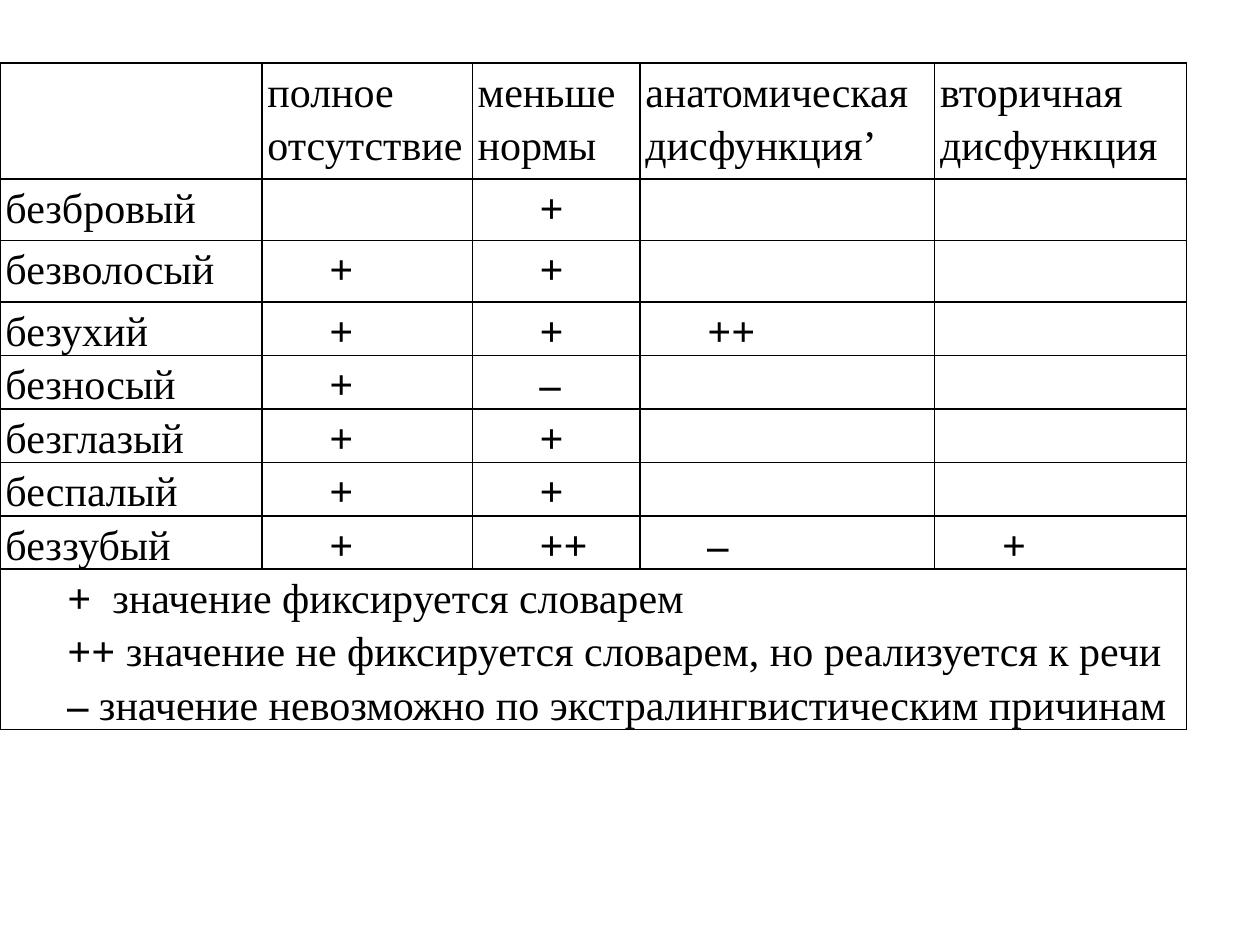
from lxml.etree import SubElement
from pptx import Presentation
from pptx.dml.color import RGBColor
from pptx.enum.text import PP_ALIGN
from pptx.oxml.ns import qn
from pptx.util import Cm, Pt

COLORS = {"ink": "000000"}
FONT = {"name": "Times New Roman", "size": Pt(24)}
CELL = {"margin_left": Cm(0.11), "margin_right": Cm(0.11), "margin_top": 0, "margin_bottom": 0}
PLAIN_TABLE = {"first_row": False, "horz_banding": False}
INDENT = Cm(1.25)
COLUMN_WIDTHS = [5.28, 4.24, 3.38, 5.94, 5.08]
ROW_HEIGHTS = [2.34, 1.24, 1.24] + [0.64] * 5 + [3.15]
HEADINGS = ["", "полное\nотсутствие", "меньше\nнормы", "анатомическая\nдисфункция’",
            "вторичная\nдисфункция"]
ADJECTIVES = [
    ["безбровый", "", "+", "", ""],
    ["безволосый", "+", "+", "", ""],
    ["безухий", "+", "+", "++", ""],
    ["безносый", "+", "–", "", ""],
    ["безглазый", "+", "+", "", ""],
    ["беспалый", "+", "+", "", ""],
    ["беззубый", "+", "++", "–", "+"],
]
LEGEND = [
    ("+", "  значение фиксируется словарем"),
    ("++", " значение не фиксируется словарем, но реализуется к речи"),
    ("–", " значение невозможно по экстралингвистическим причинам"),
]


def apply(target, values):
    """Set every attribute in a dict of format values."""
    for key, value in values.items():
        setattr(target, key, value)


def add_borders(cell):
    """Draw a thin line on all four sides of a cell."""
    properties = cell._tc.get_or_add_tcPr()
    for position, side in enumerate(("lnL", "lnR", "lnT", "lnB")):
        line = SubElement(properties, qn(f"a:{side}"), w=str(Pt(1)))
        fill = SubElement(line, qn("a:solidFill"))
        SubElement(fill, qn("a:srgbClr"), val=COLORS["ink"])
        properties.insert(position, line)


def write_line(paragraph, parts, align, indent=0):
    """Write one line from (text, bold) parts."""
    apply(paragraph, {"alignment": align, "line_spacing": 1.15})
    if indent:
        properties = paragraph._p.get_or_add_pPr()
        properties.set("marL", "0")
        properties.set("indent", str(indent))
    for text, bold in parts:
        run = paragraph.add_run()
        run.text = text
        apply(run.font, {**FONT, "bold": bold})
        run.font.color.rgb = RGBColor.from_string(COLORS["ink"])


def write_cell(cell, lines, align=PP_ALIGN.JUSTIFY, indent=0):
    """Write the lines of a cell, one paragraph each."""
    frame = cell.text_frame
    for number, parts in enumerate(lines):
        paragraph = frame.add_paragraph() if number else frame.paragraphs[0]
        write_line(paragraph, parts, align, indent)


def add_meaning_table(slide, left, top, width, height):
    """Place the table of adjectives and meanings with its legend row."""
    graphic = slide.shapes.add_table(len(ROW_HEIGHTS), len(COLUMN_WIDTHS), left, top, width, height)
    table = graphic.table
    apply(table, PLAIN_TABLE)
    for column, column_width in zip(table.columns, COLUMN_WIDTHS):
        column.width = Cm(column_width)
    for row, row_height in zip(table.rows, ROW_HEIGHTS):
        row.height = Cm(row_height)
    graphic.height = height
    for cell in table.iter_cells():
        apply(cell, CELL)
        cell.fill.background()
        add_borders(cell)

    for column, heading in enumerate(HEADINGS):
        if heading:
            write_cell(table.cell(0, column), [[(line, False)] for line in heading.split("\n")])
    for row, (adjective, *marks) in enumerate(ADJECTIVES, 1):
        write_cell(table.cell(row, 0), [[(adjective, False)]])
        for column, mark in enumerate(marks, 1):
            if mark:
                write_cell(table.cell(row, column), [[(mark, True)]], PP_ALIGN.LEFT, INDENT)

    last = len(ROW_HEIGHTS) - 1
    legend = table.cell(last, 0)
    legend.merge(table.cell(last, len(COLUMN_WIDTHS) - 1))
    write_cell(legend, [[(mark, True), (meaning, False)] for mark, meaning in LEGEND], indent=INDENT)


def main():
    """Build the slide and save it."""
    presentation = Presentation()
    apply(presentation, {"slide_width": Cm(25.4), "slide_height": Cm(19.05)})
    slide = presentation.slides.add_slide(presentation.slide_layouts[6])
    add_meaning_table(slide, Cm(0), Cm(1.27), Cm(sum(COLUMN_WIDTHS)), Cm(14.2))
    presentation.save("out.pptx")


if __name__ == "__main__":
    main()
